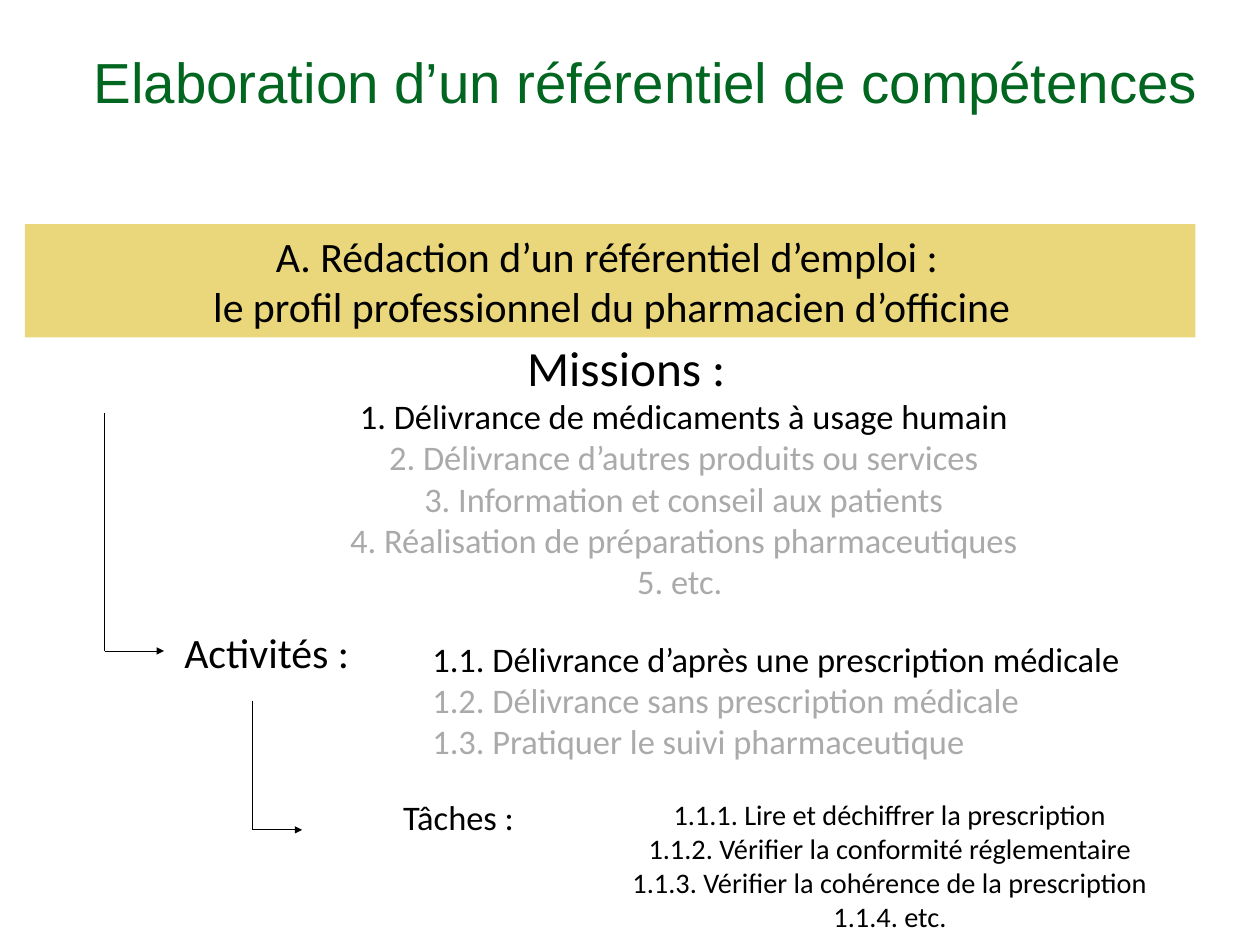
from dataclasses import dataclass
from typing import NamedTuple

from lxml.etree import SubElement
from pptx import Presentation
from pptx.dml.color import RGBColor as Rgb
from pptx.enum.shapes import MSO_CONNECTOR as Connector, MSO_SHAPE as Shape
from pptx.enum.text import MSO_ANCHOR as Anchor, PP_ALIGN as Align
from pptx.oxml.ns import qn
from pptx.util import Pt

PX = 9144  # EMU per px, 100 px to the inch


@dataclass(frozen=True)
class Theme:
    green: Rgb = Rgb(0x00, 0x66, 0x20)
    gold: Rgb = Rgb(0xEA, 0xD7, 0x7B)
    black: Rgb = Rgb(0x00, 0x00, 0x00)
    gray: Rgb = Rgb(0xAA, 0xAA, 0xAA)
    title_font: str = "Arial"
    body_font: str = "Calibri"
    title_size: float = 45.9
    heading_size: int = 40
    label_size: int = 34
    item_size: int = 28
    task_size: int = 23
    line_width: float = 0.75


THEME = Theme()


class Box(NamedTuple):
    left: int
    top: int
    width: int
    height: int

    def inner(self, left, top, width, height):
        return Box(self.left + left, self.top + top, width, height)

    def emu(self):
        return [length * PX for length in self]


def write_lines(shape, lines, size, align=Align.CENTER, active=None, first_indent=0):
    """Write one paragraph per line; lines after the active ones turn gray."""
    frame = shape.text_frame
    frame.word_wrap = True
    frame.vertical_anchor = Anchor.TOP
    frame.margin_left = frame.margin_right = 14 * PX
    frame.margin_top = frame.margin_bottom = 7 * PX
    frame.text = "\n".join(lines)
    for index, para in enumerate(frame.paragraphs):
        para.alignment = align
        properties = para._p.get_or_add_pPr()
        properties.set("marL", str(4 * PX))
        properties.set("indent", str(first_indent * PX))
        muted = active is not None and index >= active
        for span in para.runs:
            span.font.name = THEME.body_font
            span.font.size = Pt(size)
            span.font.color.rgb = THEME.gray if muted else THEME.black


def add_text(slide, box, lines, size, **options):
    write_lines(slide.shapes.add_textbox(*box.emu()), lines, size, **options)


def add_line(slide, start, end, arrow=False):
    ends = [length * PX for length in (*start, *end)]
    line = slide.shapes.add_connector(Connector.STRAIGHT, *ends)
    line.line.color.rgb = THEME.black
    line.line.width = Pt(THEME.line_width)
    if arrow:
        SubElement(line.line._get_or_add_ln(), qn("a:tailEnd"), type="triangle")
    SubElement(line._element.spPr, qn("a:effectLst"))


def draw_branch(slide, box):
    """Go down the left side of the box, then right to an arrowhead."""
    bottom = box.top + box.height
    corner = (box.left, bottom)
    add_line(slide, (box.left, box.top), corner)
    add_line(slide, corner, (box.left + box.width, bottom), arrow=True)


def draw_title(slide, box):
    frame = slide.shapes.add_textbox(*box.emu()).text_frame
    frame.word_wrap = True
    frame.vertical_anchor = Anchor.MIDDLE
    frame.margin_left = frame.margin_right = 0
    frame.margin_top = frame.margin_bottom = 0
    frame.text = "Elaboration d’un référentiel de compétences"
    para = frame.paragraphs[0]
    para.alignment = Align.CENTER
    para.line_spacing = 0.96
    font = para.runs[0].font
    font.name = THEME.title_font
    font.size = Pt(THEME.title_size)
    font.color.rgb = THEME.green


def draw_banner(slide, box):
    banner = slide.shapes.add_shape(Shape.RECTANGLE, *box.emu())
    banner.shadow.inherit = False
    banner.fill.solid()
    banner.fill.fore_color.rgb = THEME.gold
    banner.line.fill.background()
    write_lines(banner, [
        "A. Rédaction d’un référentiel d’emploi : ",
        "le profil professionnel du pharmacien d’officine",
    ], THEME.label_size)


def draw_missions(slide, box):
    add_text(slide, box.inner(0, 0, box.width, 82), ["Missions : "], THEME.heading_size)
    add_text(slide, box.inner(135, 65, 1131, 251), [
        "1. Délivrance de médicaments à usage humain",
        "2. Délivrance d’autres produits ou services",
        "3. Information et conseil aux patients",
        "4. Réalisation de préparations pharmaceutiques",
        "5. etc. ",
    ], THEME.item_size, active=1, first_indent=38)


def draw_activities(slide, box):
    draw_branch(slide, box.inner(0, 0, 67, 269))
    add_text(slide, box.inner(72, 235, 270, 71), ["Activités :"],
             THEME.label_size, align=Align.LEFT)
    add_text(slide, box.inner(352, 247, 924, 156), [
        "1.1. Délivrance d’après une prescription médicale",
        "1.2. Délivrance sans prescription médicale",
        "1.3. Pratiquer le suivi pharmaceutique",
    ], THEME.item_size, align=Align.LEFT, active=1)


def draw_tasks(slide, box):
    draw_branch(slide, box.inner(0, 0, 56, 146))
    add_text(slide, box.inner(68, 101, 325, 62), ["Tâches :"], THEME.item_size)
    add_text(slide, box.inner(337, 102, 761, 169), [
        "1.1.1. Lire et déchiffrer la prescription",
        "1.1.2. Vérifier la conformité réglementaire",
        "1.1.3. Vérifier la cohérence de la prescription",
        "1.1.4. etc.",
    ], THEME.task_size)


def main():
    deck = Presentation()
    deck.slide_width, deck.slide_height = 1422 * PX, 1067 * PX
    slide = deck.slides.add_slide(deck.slide_layouts[6])
    draw_title(slide, Box(62, 18, 1333, 154))
    draw_banner(slide, Box(28, 253, 1321, 128))
    draw_missions(slide, Box(50, 374, 1322, 316))
    draw_activities(slide, Box(118, 466, 1276, 403))
    draw_tasks(slide, Box(285, 791, 1098, 271))
    deck.save("out.pptx")


if __name__ == "__main__":
    main()
